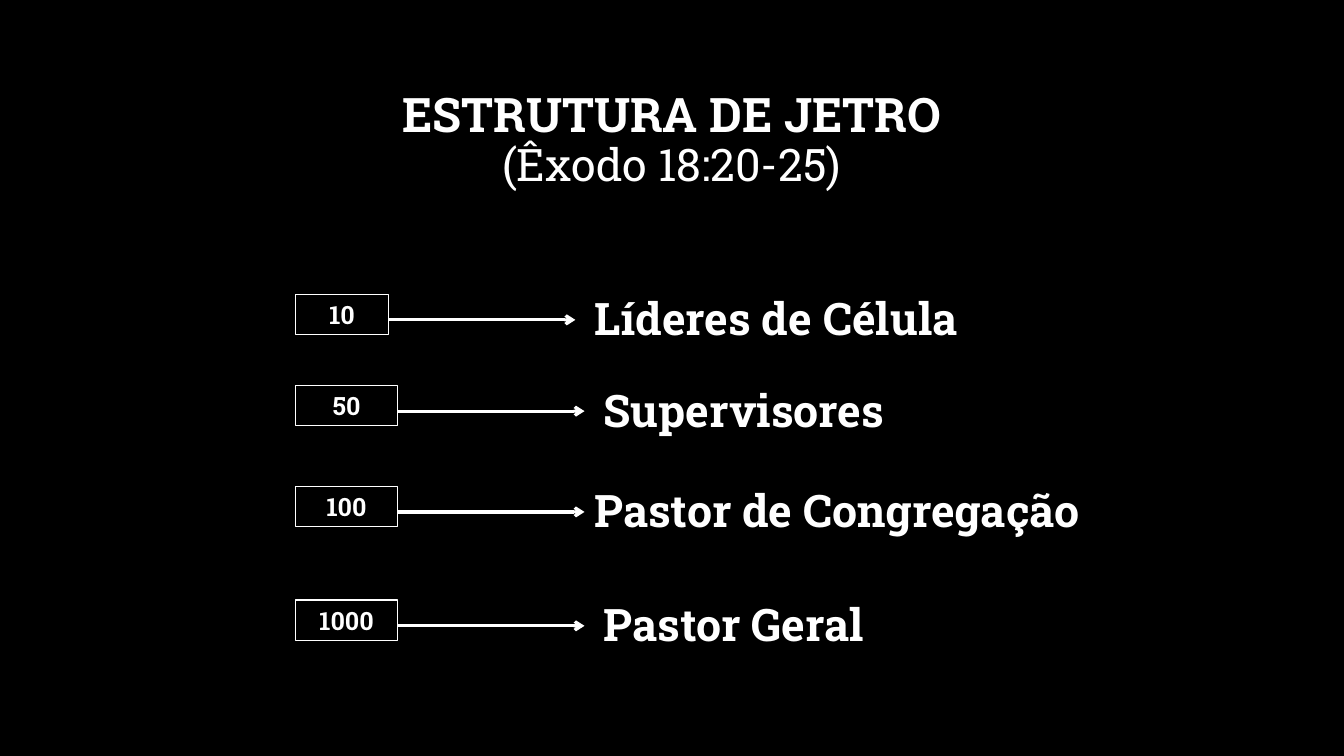
import pptx
import pptx.dml.color
import pptx.enum.shapes
import pptx.enum.text
import pptx.oxml
import pptx.oxml.ns
import pptx.util
from dataclasses import dataclass
from pptx.util import Cm, Pt

TITLE = [("ESTRUTURA DE JETRO", 34, True), ("(Êxodo 18:20-25)", 32, False)]
# count, role, top, box width, gap before role, role width, role height (cm)
LEVELS = [
    ("10", "Líderes de Célula", 7.41, 2.36, 0.23, 11.5, 1.6),
    ("50", "Supervisores", 9.71, 2.59, 0.23, 10.34, 1.6),
    ("100", "Pastor de Congregação", 12.25, 2.59, 0, 14.58, 3),
    ("1000", "Pastor Geral", 15.12, 2.59, 0.23, 14.35, 1.6),
]
BOX_LEFT, BOX_HEIGHT = 7.44, 1.02
ARROW_LENGTH, ARROW_DROP, ROLE_RISE = 4.7, 0.65, 0.2


@dataclass(frozen=True)
class Theme:
    font: str = "Roboto Slab"
    ink: pptx.dml.color.RGBColor = pptx.dml.color.RGBColor(255, 255, 255)
    ground: pptx.dml.color.RGBColor = pptx.dml.color.RGBColor(0, 0, 0)
    count_size: int = 18
    role_size: int = 32
    box_line: float = 0.75
    arrow_line: float = 2.25


THEME = Theme()
CENTER = pptx.enum.text.PP_ALIGN.CENTER
LEFT = pptx.enum.text.PP_ALIGN.LEFT
MIDDLE = pptx.enum.text.MSO_ANCHOR.MIDDLE
TOP = pptx.enum.text.MSO_ANCHOR.TOP
NAMESPACE = pptx.oxml.ns.nsdecls("a")
TEXT_SHADOW = (
    f'<a:effectLst {NAMESPACE}><a:outerShdw blurRad="38100" dist="38100" dir="2700000" '
    'algn="tl"><a:srgbClr val="808000"/></a:outerShdw></a:effectLst>'
)


def set_font(font, size, bold):
    font.name, font.size, font.bold = THEME.font, Pt(size), bold
    font.color.rgb = THEME.ink


def prepare_frame(frame, anchor):
    frame.word_wrap = True
    frame.auto_size = pptx.enum.text.MSO_AUTO_SIZE.NONE
    frame.vertical_anchor = anchor


def write_line(frame, text, size, align):
    para = frame.paragraphs[0]
    para.text, para.alignment = text, align
    set_font(para.font, size, True)


def add_title(slide):
    title = slide.shapes.title
    title.left, title.top, title.width, title.height = Cm(4.52), Cm(2.24), Cm(24.82), Cm(2.62)
    frame = title.text_frame
    prepare_frame(frame, MIDDLE)
    frame.margin_left = frame.margin_right = frame.margin_top = frame.margin_bottom = 0
    for index, (text, size, bold) in enumerate(TITLE):
        para = frame.add_paragraph() if index else frame.paragraphs[0]
        para.alignment, para.line_spacing = CENTER, 0.9
        span = para.add_run()
        span.text = text
        set_font(span.font, size, bold)
        fill = span._r.get_or_add_rPr().find(pptx.oxml.ns.qn("a:solidFill"))
        fill.addnext(pptx.oxml.parse_xml(TEXT_SHADOW))


def add_arrow(shapes, left, right, y):
    arrow = shapes.add_connector(
        pptx.enum.shapes.MSO_CONNECTOR.STRAIGHT, Cm(left), Cm(y), Cm(right), Cm(y))
    arrow.line.color.rgb = THEME.ink
    arrow.line.width = Pt(THEME.arrow_line)
    arrow.line._get_or_add_ln().append(
        pptx.oxml.parse_xml(f'<a:tailEnd {NAMESPACE} type="arrow"/>'))
    arrow._element.spPr.append(pptx.oxml.parse_xml(f"<a:effectLst {NAMESPACE}/>"))


def add_level(slide, count, role, top, box_width, gap, role_width, role_height):
    shapes = slide.shapes.add_group_shape().shapes
    box = shapes.add_shape(pptx.enum.shapes.MSO_SHAPE.RECTANGLE,
                           Cm(BOX_LEFT), Cm(top), Cm(box_width), Cm(BOX_HEIGHT))
    box.shadow.inherit = False
    box.fill.background()
    box.line.color.rgb = THEME.ink
    box.line.width = Pt(THEME.box_line)
    prepare_frame(box.text_frame, MIDDLE)
    box.text_frame.margin_top = box.text_frame.margin_bottom = 0
    write_line(box.text_frame, count, THEME.count_size, CENTER)

    arrow_start = BOX_LEFT + box_width
    arrow_end = arrow_start + ARROW_LENGTH
    add_arrow(shapes, arrow_start, arrow_end, top + ARROW_DROP)

    label = shapes.add_textbox(
        Cm(arrow_end + gap), Cm(top - ROLE_RISE), Cm(role_width), Cm(role_height))
    prepare_frame(label.text_frame, TOP)
    write_line(label.text_frame, role, THEME.role_size, LEFT)


def main():
    deck = pptx.Presentation()
    deck.slide_width, deck.slide_height = Cm(33.87), Cm(19.05)
    slide = deck.slides.add_slide(deck.slide_layouts.get_by_name("Title Only"))
    slide.background.fill.solid()
    slide.background.fill.fore_color.rgb = THEME.ground
    add_title(slide)
    for level in LEVELS:
        add_level(slide, *level)
    deck.save("out.pptx")


if __name__ == "__main__":
    main()
